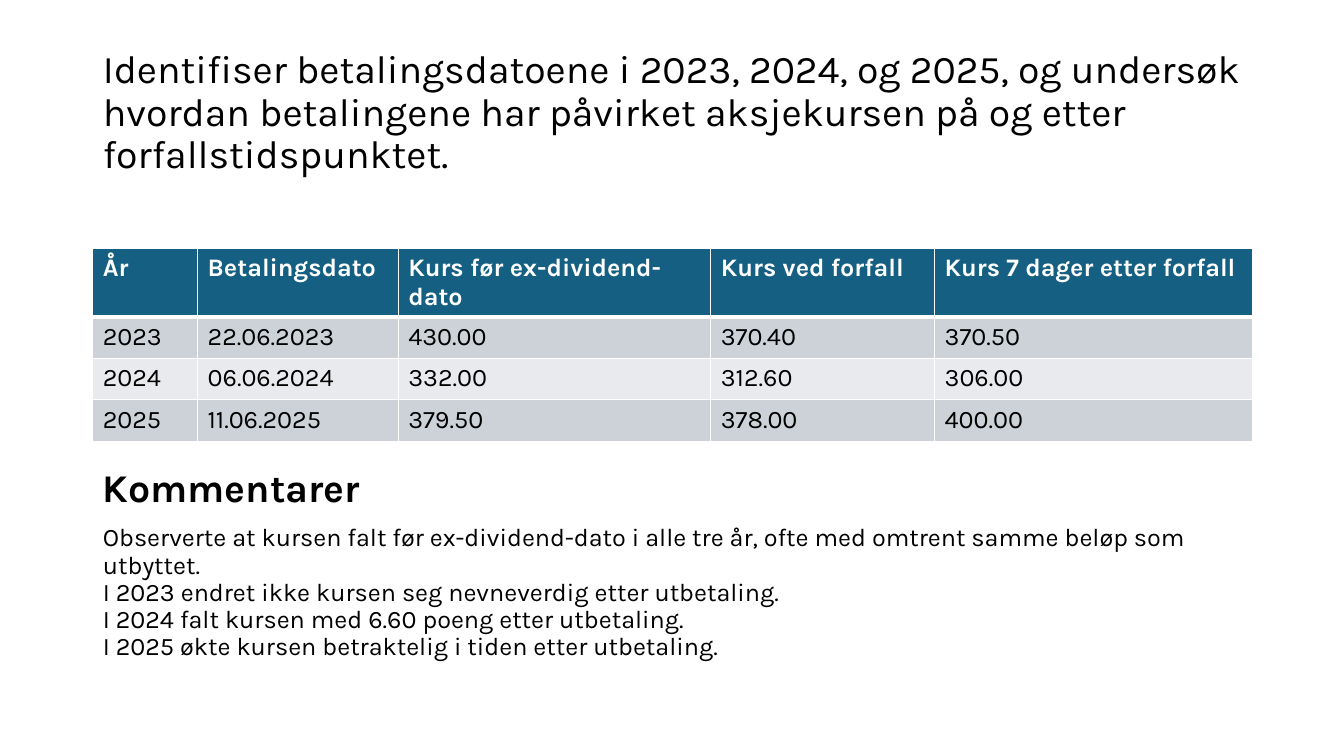
from pptx import Presentation
from pptx.dml.color import RGBColor
from pptx.enum.text import MSO_ANCHOR, MSO_AUTO_SIZE, PP_ALIGN
from pptx.oxml.ns import qn
from pptx.util import Inches, Pt
from lxml.etree import SubElement

# Content
TITLE = ("Identifiser betalingsdatoene i 2023, 2024, og 2025, og undersøk hvordan "
         "betalingene har påvirket aksjekursen på og etter forfallstidspunktet.")
PRICE_ROWS = [
    ("År", "Betalingsdato", "Kurs før ex-dividend-dato", "Kurs ved forfall",
     "Kurs 7 dager etter forfall"),
    ("2023", "22.06.2023", "430.00", "370.40", "370.50"),
    ("2024", "06.06.2024", "332.00", "312.60", "306.00"),
    ("2025", "11.06.2025", "379.50", "378.00", "400.00"),
]
COMMENT_HEADING = "Kommentarer"
COMMENTS = [
    "Observerte at kursen falt før ex-dividend-dato i alle tre år, ofte med omtrent "
    "samme beløp som utbyttet.",
    "I 2023 endret ikke kursen seg nevneverdig etter utbetaling.",
    "I 2024 falt kursen med 6.60 poeng etter utbetaling.",
    "I 2025 økte kursen betraktelig i tiden etter utbetaling.",
]

# Style and layout
FONT = "Karla"
BLACK = RGBColor(0x00, 0x00, 0x00)
WHITE = RGBColor(0xFF, 0xFF, 0xFF)
HEADER_BLUE = RGBColor(0x15, 0x60, 0x82)
BAND_DARK = RGBColor(0xCC, 0xD2, 0xD8)
BAND_LIGHT = RGBColor(0xE8, 0xEA, 0xED)
LEFT, WIDTH = 0.92, 11.5
COLUMN_WIDTHS = [1.04, 1.99, 3.1, 2.22, 3.15]
ROW_HEIGHT = 0.41


def add_text(paragraph, text, size, color=BLACK, bold=False):
    run = paragraph.add_run()
    run.text = text
    font = run.font
    font.name, font.size, font.bold = FONT, Pt(size), bold
    font.color.rgb = color


def place(shape, top, height, anchor):
    shape.left, shape.top = Inches(LEFT), Inches(top)
    shape.width, shape.height = Inches(WIDTH), Inches(height)
    frame = shape.text_frame
    frame.word_wrap = True
    frame.auto_size = MSO_AUTO_SIZE.NONE
    frame.vertical_anchor = anchor
    return frame


def format_paragraph(paragraph, space_before):
    paragraph.alignment = PP_ALIGN.LEFT
    paragraph.line_spacing = 0.9
    paragraph.space_before = Pt(space_before)
    properties = paragraph._p.get_or_add_pPr()
    properties.set("marL", "0")
    properties.set("indent", "0")
    SubElement(properties, qn("a:buNone"))


def set_borders(cell, bottom_width):
    properties = cell._tc.get_or_add_tcPr()
    widths = {"a:lnL": 1, "a:lnR": 1, "a:lnT": 1, "a:lnB": bottom_width}
    for position, (tag, width) in enumerate(widths.items()):
        line = SubElement(properties, qn(tag), w=str(Pt(width)))
        fill = SubElement(line, qn("a:solidFill"))
        SubElement(fill, qn("a:srgbClr"), val=str(WHITE))
        properties.insert(position, line)


presentation = Presentation()
presentation.slide_width = Inches(13.33)
presentation.slide_height = Inches(7.5)
slide = presentation.slides.add_slide(presentation.slide_layouts[1])

# Title
title_frame = place(slide.shapes.title, 0.4, 1.45, MSO_ANCHOR.MIDDLE)
title = title_frame.paragraphs[0]
format_paragraph(title, 0)
add_text(title, TITLE, 28)

# Price table
table = slide.shapes.add_table(
    len(PRICE_ROWS), len(COLUMN_WIDTHS), Inches(LEFT), Inches(2.46),
    Inches(WIDTH), Inches(ROW_HEIGHT * len(PRICE_ROWS))).table
for column, width in zip(table.columns, COLUMN_WIDTHS):
    column.width = Inches(width)
for row_index, values in enumerate(PRICE_ROWS):
    is_header = row_index == 0
    band = BAND_DARK if row_index % 2 else BAND_LIGHT
    for column_index, value in enumerate(values):
        cell = table.cell(row_index, column_index)
        cell.fill.solid()
        cell.fill.fore_color.rgb = HEADER_BLUE if is_header else band
        # The rule under the header is shared with the first data row
        set_borders(cell, 3 if is_header else 1)
        if row_index == 1:
            cell._tc.tcPr.find(qn("a:lnT")).set("w", str(Pt(3)))
        add_text(cell.text_frame.paragraphs[0], value, 18,
                 WHITE if is_header else BLACK, is_header)

# Comments
body_frame = place(slide.placeholders[1], 4.6, 3, MSO_ANCHOR.TOP)
heading = body_frame.paragraphs[0]
format_paragraph(heading, 10)
add_text(heading, COMMENT_HEADING, 28, bold=True)
comments = body_frame.add_paragraph()
format_paragraph(comments, 10)
for index, comment in enumerate(COMMENTS):
    if index:
        comments.add_line_break()
    add_text(comments, comment, 18)

presentation.save("out.pptx")
